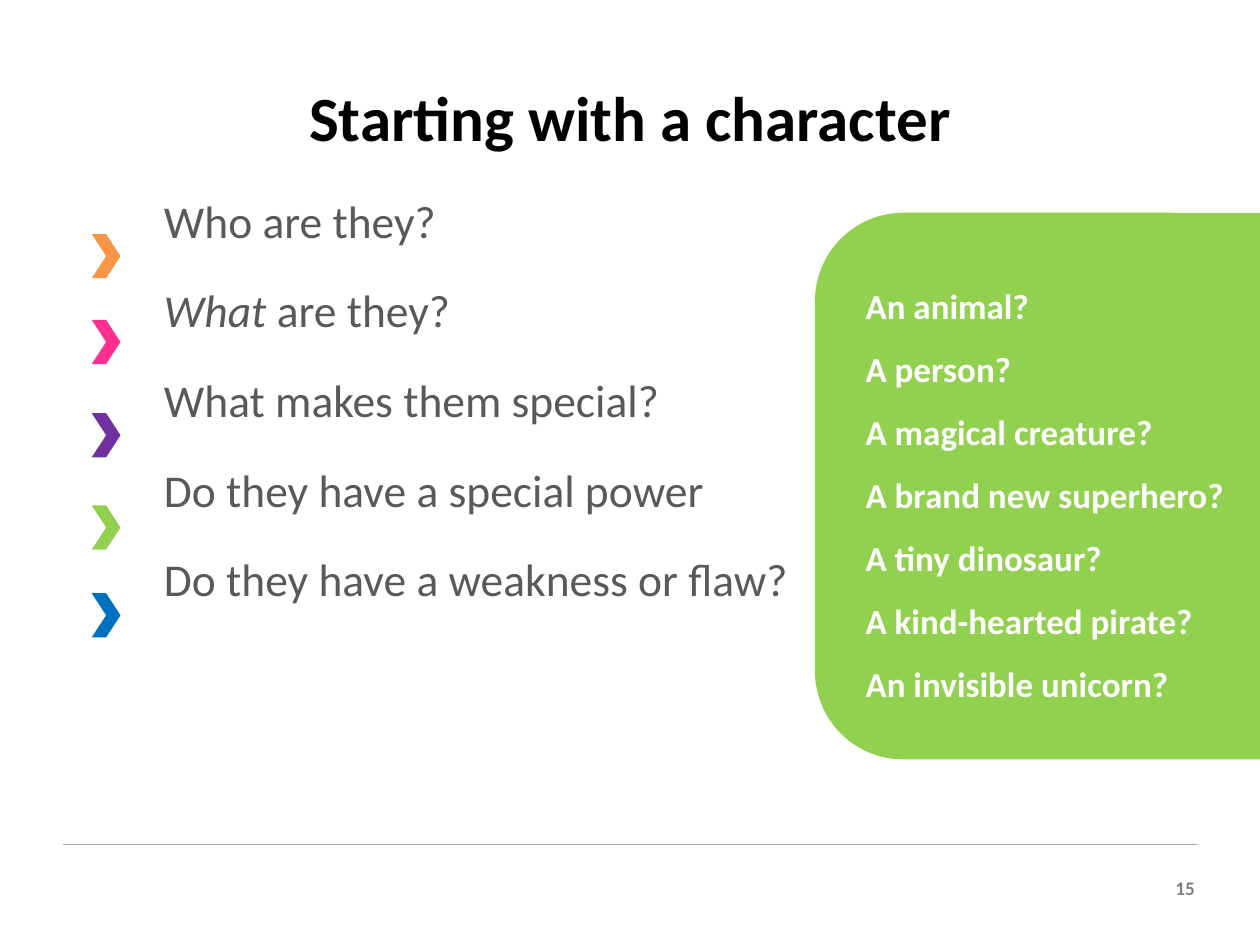
"""Build the slide on starting a story with a character."""
import lxml.etree
import pptx
import pptx.dml.color
import pptx.enum.shapes
import pptx.enum.text
import pptx.oxml.ns
import pptx.util

Cm = pptx.util.Cm
Pt = pptx.util.Pt
Kind = pptx.enum.shapes.MSO_SHAPE
Align = pptx.enum.text.PP_ALIGN
Anchor = pptx.enum.text.MSO_ANCHOR
Fit = pptx.enum.text.MSO_AUTO_SIZE
qn = pptx.oxml.ns.qn

GREEN = "92D050"
MARKS = [(4.72, "F79646"), (6.45, "FF2F92"), (8.33, "7030A0"),
         (10.19, GREEN), (11.96, "0070C0")]
ASKS = [[("Who are they?", False)],
        [("What", True), (" are they?", False)],
        [("What makes them special?", False)],
        [("Do they have a special power", False)],
        [("Do they have a weakness or flaw?", False)]]
IDEAS = ["An animal?", "A person?", "A magical creature?",
         "A brand new superhero?", "A tiny dinosaur?",
         "A kind-hearted pirate?", "An invisible unicorn?"]


def paint(code):
    return pptx.dml.color.RGBColor.from_string(code)


def apply(item, form):
    for key, value in form.items():
        setattr(item, key, value)


class Page:
    style = {
        "title": ({"name": "Calibri", "size": Pt(36), "bold": True}, "000000"),
        "list": ({"name": "Calibri", "size": Pt(26)}, "595959"),
        "panel": ({"name": "Calibri", "size": Pt(20), "bold": True}, "FFFFFF"),
        "number": ({"name": "Calibri", "size": Pt(11), "bold": True}, "7F7F7F"),
    }

    def __init__(self, slide):
        self.slide = slide

    def format(self, font, role):
        form, code = self.style[role]
        apply(font, form)
        font.color.rgb = paint(code)

    def place(self, shape, left, top, width, height):
        apply(shape, {"left": Cm(left), "top": Cm(top),
                      "width": Cm(width), "height": Cm(height)})

    def title(self, text, *box):
        shape = self.slide.shapes.title
        self.place(shape, *box)
        frame = shape.text_frame
        pad = Cm(0.13)
        apply(frame, {"text": text, "auto_size": Fit.NONE,
                      "vertical_anchor": Anchor.MIDDLE,
                      "margin_left": pad, "margin_right": pad,
                      "margin_top": pad, "margin_bottom": pad})
        para = frame.paragraphs[0]
        para.alignment = Align.CENTER
        self.format(para.runs[0].font, "title")

    def list(self, rows, *box):
        shape = self.slide.placeholders[1]
        self.place(shape, *box)
        frame = shape.text_frame
        apply(frame, {"auto_size": Fit.NONE, "word_wrap": True,
                      "vertical_anchor": Anchor.TOP})
        for index, row in enumerate(rows):
            para = frame.add_paragraph() if index else frame.paragraphs[0]
            props = para._p.get_or_add_pPr()
            props.set("marL", "0")
            props.set("indent", "0")
            lxml.etree.SubElement(props, qn("a:buNone"))
            para.space_before = Pt(20 if index else 0)
            for text, slant in row:
                run = para.add_run()
                run.text = text
                self.format(run.font, "list")
                run.font.italic = slant

    def text(self, lines, role, box, form):
        frame = self.slide.shapes.add_textbox(*map(Cm, box)).text_frame
        frame.word_wrap = True
        for index, line in enumerate(lines):
            para = frame.add_paragraph() if index else frame.paragraphs[0]
            apply(para, form)
            run = para.add_run()
            run.text = line
            self.format(run.font, role)

    def shape(self, kind, code, *box):
        shape = self.slide.shapes.add_shape(kind, *map(Cm, box))
        shape.shadow.inherit = False
        shape.fill.solid()
        shape.fill.fore_color.rgb = paint(code)
        shape.line.fill.background()

    def rule(self, code, *ends):
        line = self.slide.shapes.add_connector(
            pptx.enum.shapes.MSO_CONNECTOR.STRAIGHT, *map(Cm, ends))
        line.line.color.rgb = paint(code)
        line.line.width = Pt(0.75)
        lxml.etree.SubElement(line._element.spPr, qn("a:effectLst"))


def main():
    deck = pptx.Presentation()
    deck.slide_width, deck.slide_height = Cm(25.4), Cm(19.05)
    page = Page(deck.slides.add_slide(deck.slide_layouts[1]))
    page.rule("A5A5A5", 1.27, 17.02, 24.13, 17.02)
    page.text(["15"], "number", (23.37, 17.55, 0.97, 0.74),
              {"alignment": Align.RIGHT})
    page.title("Starting with a character", 1.27, 0.76, 22.86, 3.18)
    page.list(ASKS, 3.05, 3.76, 16.94, 9.37)
    for top, code in MARKS:
        page.shape(Kind.CHEVRON, code, 1.85, top, 0.58, 0.89)
    page.shape(Kind.ROUNDED_RECTANGLE, GREEN, 16.43, 4.29, 10.69, 11.02)
    page.text(IDEAS, "panel", (17.2, 5.18, 12.7, 9.09), {"line_spacing": 1.5})
    deck.save("out.pptx")


if __name__ == "__main__":
    main()
